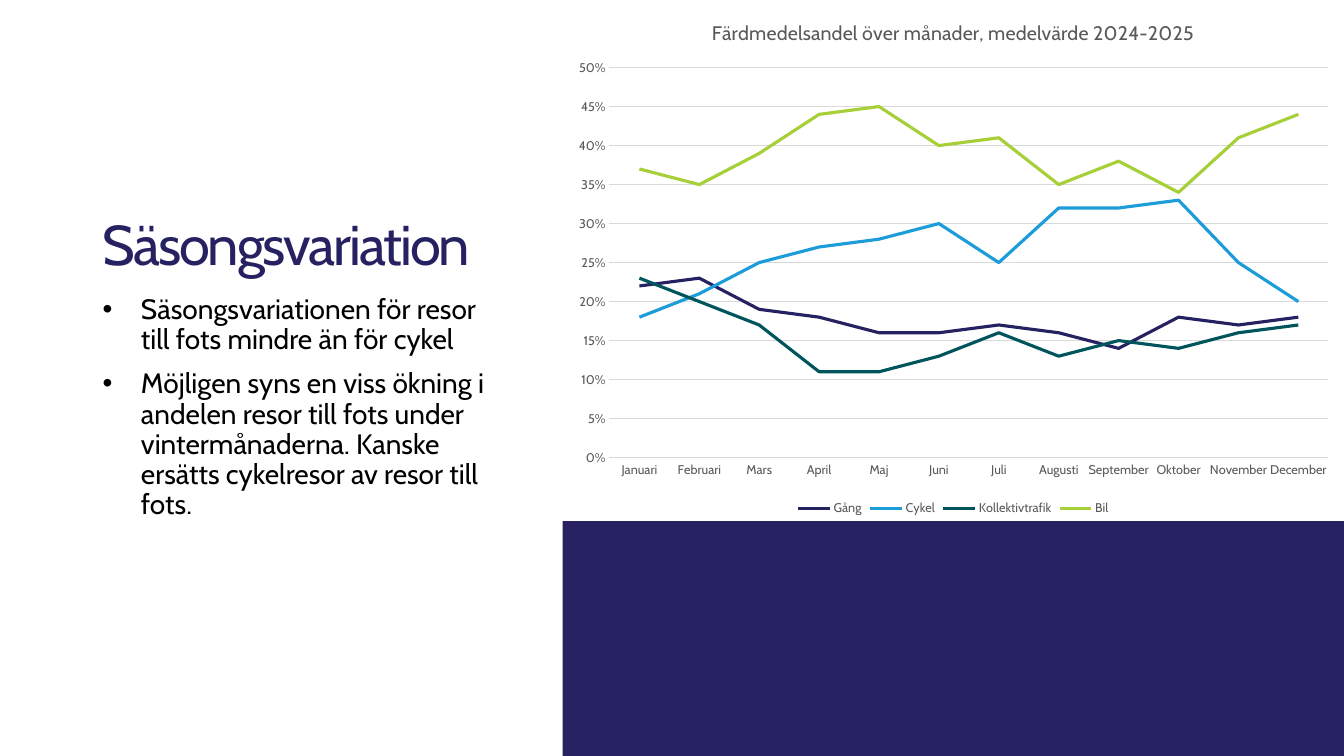
"""Build the slide on seasonal variation in travel modes."""
from lxml.etree import SubElement
from pptx import Presentation
from pptx.chart.data import CategoryChartData
from pptx.dml.color import RGBColor
from pptx.enum.chart import XL_CHART_TYPE, XL_LEGEND_POSITION, XL_TICK_MARK
from pptx.enum.shapes import MSO_SHAPE
from pptx.enum.text import MSO_ANCHOR, PP_ALIGN
from pptx.oxml.ns import qn
from pptx.util import Inches, Pt

FONT = "Cabin"
COLORS = {"panel": "262262", "title": "262261", "body": "000000",
          "label": "595959", "grid": "D9D9D9"}
TITLE = "Säsongsvariation"
BULLETS = [
    "Säsongsvariationen för resor till fots mindre än för cykel",
    "Möjligen syns en viss ökning i andelen resor till fots under "
    "vintermånaderna. Kanske ersätts cykelresor av resor till fots.",
]
CHART_TITLE = "Färdmedelsandel över månader, medelvärde 2024-2025"
MONTHS = ["Januari", "Februari", "Mars", "April", "Maj", "Juni", "Juli",
          "Augusti", "September", "Oktober", "November", "December"]
SERIES = [
    ("Gång", "262261", [0.22, 0.23, 0.19, 0.18, 0.16, 0.16,
                        0.17, 0.16, 0.14, 0.18, 0.17, 0.18]),
    ("Cykel", "1C9CD9", [0.18, 0.21, 0.25, 0.27, 0.28, 0.3,
                         0.25, 0.32, 0.32, 0.33, 0.25, 0.2]),
    ("Kollektivtrafik", "00555C", [0.23, 0.2, 0.17, 0.11, 0.11, 0.13,
                                   0.16, 0.13, 0.15, 0.14, 0.16, 0.17]),
    ("Bil", "A6CF38", [0.37, 0.35, 0.39, 0.44, 0.45, 0.4,
                       0.41, 0.35, 0.38, 0.34, 0.41, 0.44]),
]
PLOT = {"x": 0.06, "y": 0.13, "w": 0.92, "h": 0.75}
SLIDE_W, SLIDE_H = 13.33, 7.5
LEFT, TEXT_W = 0.92, 4.19
PANEL_X, PANEL_Y = 5.58, 5.17


def style(font, size, color):
    font.name, font.size, font.bold = FONT, Pt(size), False
    font.color.rgb = RGBColor.from_string(color)


def style_line(line, color, width):
    line.color.rgb = RGBColor.from_string(color)
    line.width = Pt(width)


def add_panel(slide):
    sp = slide.shapes.add_shape(
        MSO_SHAPE.RECTANGLE, Inches(PANEL_X), Inches(PANEL_Y),
        Inches(SLIDE_W - PANEL_X), Inches(SLIDE_H - PANEL_Y))
    sp.shadow.inherit = False
    sp.fill.solid()
    sp.fill.fore_color.rgb = RGBColor.from_string(COLORS["panel"])
    sp.line.fill.background()


def add_title(slide):
    sp = slide.shapes.title
    sp.left, sp.top = Inches(LEFT), Inches(1.23)
    sp.width, sp.height = Inches(TEXT_W), Inches(1.57)
    tf = sp.text_frame
    tf.word_wrap = True
    tf.vertical_anchor = MSO_ANCHOR.BOTTOM
    p = tf.paragraphs[0]
    p.alignment, p.line_spacing = PP_ALIGN.LEFT, 0.9
    r = p.add_run()
    r.text = TITLE
    style(r.font, 40, COLORS["title"])
    r.font._element.set("spc", "-150")


def add_bullets(slide):
    tf = slide.shapes.add_textbox(Inches(LEFT), Inches(2.88),
                                  Inches(TEXT_W), Inches(3.87)).text_frame
    tf.word_wrap = True
    for i, text in enumerate(BULLETS):
        p = tf.add_paragraph() if i else tf.paragraphs[0]
        p.line_spacing, p.space_before = 0.9, Pt(10 if i else 0)
        pPr = p._p.get_or_add_pPr()
        pPr.set("marL", str(Inches(0.38)))
        pPr.set("indent", str(Inches(-0.38)))
        SubElement(pPr, qn("a:buFont"), typeface="Arial")
        SubElement(pPr, qn("a:buChar"), char="•")
        r = p.add_run()
        r.text = text
        style(r.font, 20, COLORS["body"])


def place_plot(chart):
    area = chart._chartSpace.chart.plotArea
    for old in area.findall(qn("c:layout")):
        area.remove(old)
    layout = SubElement(area, qn("c:layout"))
    area.insert(0, layout)
    manual = SubElement(layout, qn("c:manualLayout"))
    SubElement(manual, qn("c:layoutTarget"), val="inner")
    for key in "xy":
        SubElement(manual, qn(f"c:{key}Mode"), val="edge")
    for key, value in PLOT.items():
        SubElement(manual, qn(f"c:{key}"), val=str(value))


def add_line_chart(slide):
    data = CategoryChartData(number_format="0%")
    data.categories = MONTHS
    for name, _, values in SERIES:
        data.add_series(name, values)
    chart = slide.shapes.add_chart(
        XL_CHART_TYPE.LINE, Inches(PANEL_X), Inches(0),
        Inches(SLIDE_W - PANEL_X), Inches(5.16), data).chart
    style(chart.font, 10, COLORS["body"])
    chart.has_title = True
    r = chart.chart_title.text_frame.paragraphs[0].add_run()
    r.text = CHART_TITLE
    style(r.font, 14, COLORS["label"])
    chart.chart_title.include_in_layout = False

    chart.has_legend = True
    chart.legend.position = XL_LEGEND_POSITION.BOTTOM
    chart.legend.include_in_layout = False
    style(chart.legend.font, 9, COLORS["label"])

    months, shares = chart.category_axis, chart.value_axis
    for axis in (months, shares):
        axis.major_tick_mark = axis.minor_tick_mark = XL_TICK_MARK.NONE
        style(axis.tick_labels.font, 9, COLORS["label"])
    style_line(months.format.line, COLORS["grid"], 0.75)
    shares.format.line.fill.background()
    shares.has_major_gridlines = True
    style_line(shares.major_gridlines.format.line, COLORS["grid"], 0.75)
    shares.minimum_scale, shares.maximum_scale = 0, 0.5
    shares.major_unit = 0.05
    shares.tick_labels.number_format = "0%"
    shares.tick_labels.number_format_is_linked = False

    chart.plots[0].vary_by_categories = False
    for series, (_, color, _) in zip(chart.plots[0].series, SERIES):
        series.smooth = False
        style_line(series.format.line, color, 2.25)
    place_plot(chart)


def main():
    prs = Presentation()
    prs.slide_width, prs.slide_height = Inches(SLIDE_W), Inches(SLIDE_H)
    slide = prs.slides.add_slide(prs.slide_layouts[5])
    add_panel(slide)
    add_title(slide)
    add_bullets(slide)
    add_line_chart(slide)
    prs.save("out.pptx")


if __name__ == "__main__":
    main()
